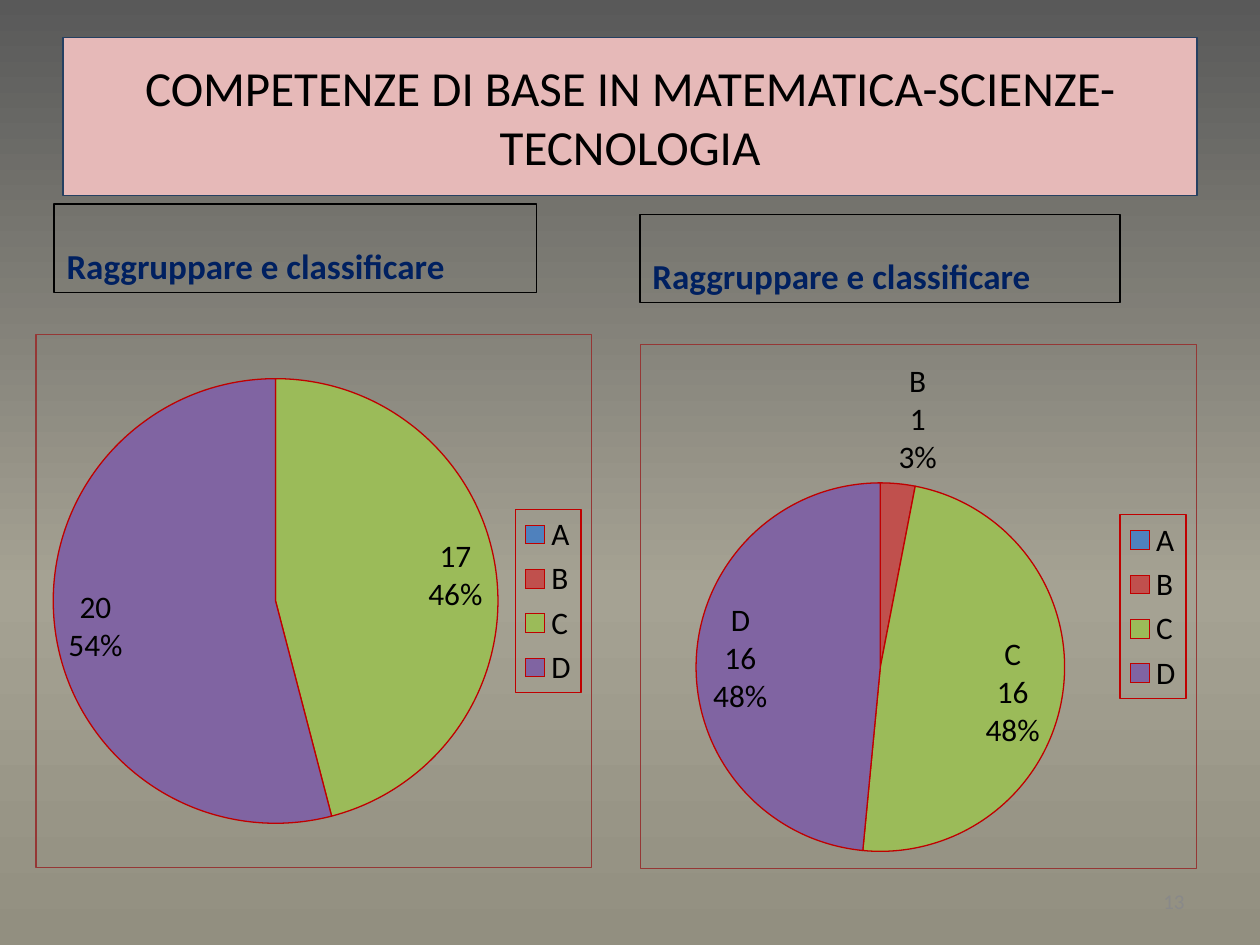
from lxml import etree
from pptx import Presentation
from pptx.chart.data import CategoryChartData
from pptx.dml.color import RGBColor
from pptx.enum.chart import XL_CHART_TYPE, XL_LABEL_POSITION, XL_LEGEND_POSITION
from pptx.enum.text import MSO_ANCHOR, PP_ALIGN
from pptx.oxml import parse_xml
from pptx.oxml.ns import nsdecls, qn
from pptx.util import Inches, Pt

PIE = XL_CHART_TYPE.PIE
BEST_FIT = XL_LABEL_POSITION.BEST_FIT
RIGHT_LEGEND = XL_LEGEND_POSITION.RIGHT
MIDDLE, BOTTOM = MSO_ANCHOR.MIDDLE, MSO_ANCHOR.BOTTOM
LEFT, CENTER, RIGHT = PP_ALIGN.LEFT, PP_ALIGN.CENTER, PP_ALIGN.RIGHT
TITLE_ONLY = 5
LEVELS = ["A", "B", "C", "D"]
LEVEL_COLORS = ["4F81BD", "C0504D", "9BBB59", "8064A2"]


def color(value):
    return RGBColor.from_string(value)


def outline_xml(value):
    return parse_xml(
        f'<c:spPr {nsdecls("c", "a")}><a:noFill/><a:ln w="9525"><a:solidFill>'
        f'<a:srgbClr val="{value}"/></a:solidFill></a:ln></c:spPr>')


class CompetenceSlide:
    font = "Calibri"
    ink = "000000"
    slice_line = "C00000"
    frame_line = "953735"

    def __init__(self, prs):
        self.slide = prs.slides.add_slide(prs.slide_layouts[TITLE_ONLY])

    def background(self, stops):
        fill = self.slide.background.fill
        fill.gradient()
        gradient = self.slide.element.find(".//" + qn("a:gradFill"))
        stop_list = gradient.find(qn("a:gsLst"))
        for old in list(stop_list):
            stop_list.remove(old)
        for percent, value in stops:
            stop = etree.SubElement(stop_list, qn("a:gs"), pos=str(percent * 1000))
            etree.SubElement(stop, qn("a:srgbClr"), val=value)
        direction = gradient.find(qn("a:lin"))
        direction.set("ang", "5400000")
        direction.set("scaled", "0")

    def set_text(self, shape, text, size, ink, align, anchor, bold=False):
        frame = shape.text_frame
        frame.word_wrap = True
        frame.vertical_anchor = anchor
        frame.text = text
        paragraph = frame.paragraphs[0]
        paragraph.alignment = align
        paragraph.font.name = self.font
        paragraph.font.size = Pt(size)
        paragraph.font.bold = bold
        paragraph.font.color.rgb = color(ink)

    def outline(self, shape, value):
        shape.line.color.rgb = color(value)
        shape.line.width = Pt(0.75)

    def title(self, text, left, top, width, height):
        title = self.slide.shapes.title
        title.left, title.top = Inches(left), Inches(top)
        title.width, title.height = Inches(width), Inches(height)
        title.fill.solid()
        title.fill.fore_color.rgb = color("E6B9B8")
        self.outline(title, "254061")
        self.set_text(title, text, 28, self.ink, CENTER, MIDDLE)

    def text_box(self, left, top, width, height):
        return self.slide.shapes.add_textbox(
            Inches(left), Inches(top), Inches(width), Inches(height))

    def heading(self, text, left, top, width, height):
        heading = self.text_box(left, top, width, height)
        self.outline(heading, self.ink)
        self.set_text(heading, text, 20, "002060", LEFT, BOTTOM, bold=True)

    def page_number(self, text, left, top, width, height):
        number = self.text_box(left, top, width, height)
        self.set_text(number, text, 12, "898989", RIGHT, MIDDLE)

    def pie(self, counts, show_level, left, top, width, height):
        data = CategoryChartData()
        data.categories = LEVELS
        data.add_series("Series 1", counts)
        chart = self.slide.shapes.add_chart(
            PIE, Inches(left), Inches(top), Inches(width), Inches(height), data).chart
        chart.has_title = False
        chart.font.name = self.font
        chart.font.size = Pt(18)
        chart.font.color.rgb = color(self.ink)
        chart.element.find(qn("c:chart")).addnext(outline_xml(self.frame_line))

        chart.has_legend = True
        chart.legend.position = RIGHT_LEGEND
        chart.legend.include_in_layout = False
        legend = chart.element.find(".//" + qn("c:legend"))
        legend.find(qn("c:overlay")).addnext(outline_xml(self.slice_line))

        plot = chart.plots[0]
        plot.vary_by_categories = True
        series = plot.series[0]
        labels = series.data_labels
        labels.show_value = True
        labels.show_percentage = True
        labels.show_category_name = show_level
        labels.show_legend_key = False
        labels.position = BEST_FIT
        label_list = chart.element.find(".//" + qn("c:ser")).find(qn("c:dLbls"))
        label_list.find(qn("c:showBubbleSize")).addnext(
            parse_xml(f'<c:separator {nsdecls("c")}>\n</c:separator>'))

        empty_levels = [i for i, count in enumerate(counts) if count == 0]
        for position, level in enumerate(empty_levels):
            label_list.insert(position, parse_xml(
                f'<c:dLbl {nsdecls("c")}><c:idx val="{level}"/>'
                '<c:delete val="1"/></c:dLbl>'))

        for level, value in enumerate(LEVEL_COLORS):
            piece = series.points[level].format
            piece.fill.solid()
            piece.fill.fore_color.rgb = color(value)
            self.outline(piece, self.slice_line)


def main():
    prs = Presentation()
    prs.slide_width, prs.slide_height = Inches(10), Inches(7.5)
    page = CompetenceSlide(prs)
    page.background([(0, "595959"), (62, "A5A293"), (100, "928F80")])
    page.title("COMPETENZE DI BASE IN MATEMATICA-SCIENZE-TECNOLOGIA", 0.5, 0.3, 9, 1.25)
    skill = "Raggruppare e classificare"
    page.heading(skill, 0.43, 1.62, 3.83, 0.7)
    page.pie([0, 0, 17, 20], False, 0.28, 2.65, 4.42, 4.24)
    page.heading(skill, 5.08, 1.7, 3.81, 0.7)
    page.pie([0, 1, 16, 16], True, 5.08, 2.73, 4.42, 4.17)
    page.page_number("13", 7.17, 6.95, 2.33, 0.4)
    prs.save("out.pptx")


if __name__ == "__main__":
    main()
